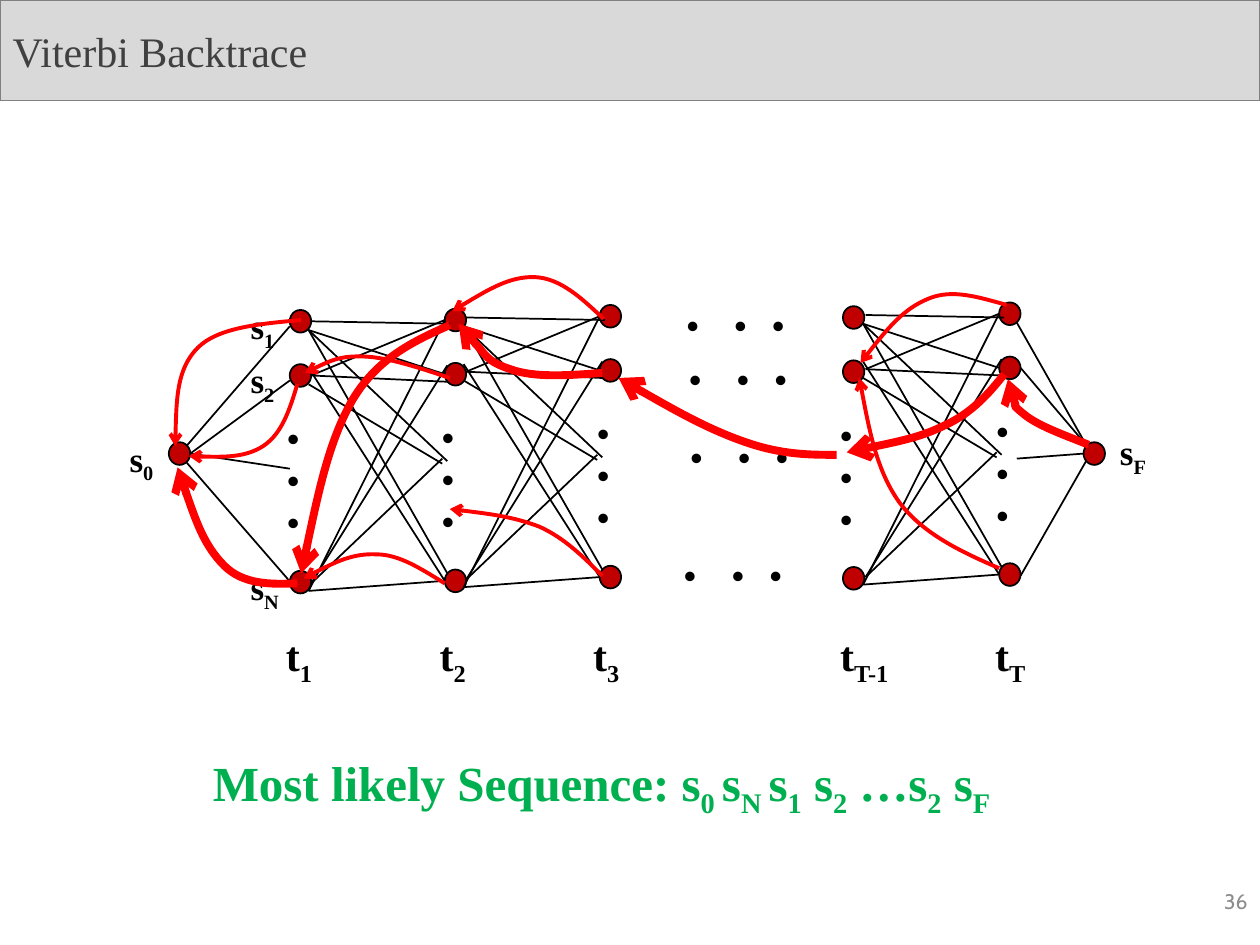
from dataclasses import dataclass

from lxml import etree
from pptx import Presentation
from pptx.dml.color import RGBColor
from pptx.enum.shapes import MSO_CONNECTOR, MSO_SHAPE
from pptx.enum.text import MSO_ANCHOR, MSO_AUTO_SIZE, PP_ALIGN
from pptx.oxml.ns import qn
from pptx.util import Inches, Pt

STRAIGHT = MSO_CONNECTOR.STRAIGHT
OVAL = MSO_SHAPE.OVAL
MIDDLE = MSO_ANCHOR.MIDDLE
LEFT, RIGHT = PP_ALIGN.LEFT, PP_ALIGN.RIGHT
FIT_SHAPE = MSO_AUTO_SIZE.SHAPE_TO_FIT_TEXT


@dataclass(frozen=True)
class Theme:
    font: str = "Times New Roman"
    number_font: str = "Cabin"
    black: RGBColor = RGBColor(0, 0, 0)
    node: RGBColor = RGBColor(0xC0, 0, 0)
    trace: RGBColor = RGBColor(0xFF, 0, 0)
    answer: RGBColor = RGBColor(0, 0xB0, 0x50)
    bar: RGBColor = RGBColor(0xD9, 0xD9, 0xD9)
    bar_line: RGBColor = RGBColor(0x80, 0x80, 0x80)
    title: RGBColor = RGBColor(0x40, 0x40, 0x40)
    number: RGBColor = RGBColor(0x8C, 0x8C, 0x8C)
    title_size: int = 24
    state_size: int = 20
    time_size: int = 24
    answer_size: int = 28
    number_size: int = 12
    thin: float = 1
    pointer: float = 2.25
    best: float = 4.5


theme = Theme()


def add_label(left, top, width, height, parts, size=theme.state_size, color=theme.black, lines=1):
    shape = slide.shapes.add_textbox(Inches(left), Inches(top), Inches(width), Inches(height))
    frame = shape.text_frame
    frame.word_wrap = False
    frame.auto_size = FIT_SHAPE
    for line in range(lines):
        paragraph = frame.add_paragraph() if line else frame.paragraphs[0]
        for index, part in enumerate(parts):
            run = paragraph.add_run()
            run.text = part
            run.font.name = theme.font
            run.font.size = Pt(size)
            run.font.bold = True
            run.font.color.rgb = color
            if index % 2:
                run.font._element.set("baseline", "-25000")
    return paragraph


def add_back_pointer(points, width):
    corners = [(Inches(x), Inches(y)) for x, y in points]
    builder = slide.shapes.build_freeform(*corners[0])
    builder.add_line_segments(corners[1:], close=False)
    shape = builder.convert_to_shape()
    shape.shadow.inherit = False
    shape.fill.background()
    shape.line.color.rgb = theme.trace
    shape.line.width = Pt(width)
    segments = list(shape._element.iter(qn("a:lnTo")))
    for first in range(0, len(segments), 3):
        curve = etree.Element(qn("a:cubicBezTo"))
        segments[first].addprevious(curve)
        for segment in segments[first:first + 3]:
            curve.append(segment[0])
            segment.getparent().remove(segment)
    etree.SubElement(shape.line._get_or_add_ln(), qn("a:tailEnd"), type="arrow")


presentation = Presentation()
presentation.slide_width = Inches(10)
presentation.slide_height = Inches(7.5)
slide = presentation.slides.add_slide(presentation.slide_layouts[5])

title = slide.shapes.title
title.left, title.top, title.width, title.height = Inches(0), Inches(0), Inches(10), Inches(0.8)
title.fill.solid()
title.fill.fore_color.rgb = theme.bar
title.line.color.rgb = theme.bar_line
title.line.width = Pt(0.75)
title.text_frame.text = "Viterbi Backtrace"
title.text_frame.vertical_anchor = MIDDLE
paragraph = title.text_frame.paragraphs[0]
paragraph.alignment = LEFT
paragraph.font.name = theme.font
paragraph.font.size = Pt(theme.title_size)
paragraph.font.color.rgb = theme.title

number = slide.shapes.add_textbox(Inches(7.67), Inches(6.95), Inches(2.33), Inches(0.4))
number.text_frame.word_wrap = True
number.text_frame.vertical_anchor = MIDDLE
number.text_frame.text = "36"
paragraph = number.text_frame.paragraphs[0]
paragraph.alignment = RIGHT
paragraph.font.name = theme.number_font
paragraph.font.size = Pt(theme.number_size)
paragraph.font.color.rgb = theme.number

columns = [(2.3, 2.46), (3.53, 2.45), (4.76, 2.42), (6.69, 2.43), (7.93, 2.4)]
row_offsets = [0, 0.43, 2.07]
nodes = [(x, y + offset) for x, y in columns for offset in row_offsets]
nodes += [(1.34, 3.51), (8.6, 3.51)]
for x, y in nodes:
    node = slide.shapes.add_shape(OVAL, Inches(x), Inches(y), Inches(0.17), Inches(0.18))
    node.shadow.inherit = False
    node.fill.solid()
    node.fill.fore_color.rgb = theme.node
    node.line.color.rgb = theme.black
    node.line.width = Pt(theme.thin)

for x, y in columns:
    add_label(x - 0.12, y + 0.8, 0.33, 1.11, ["•"], lines=3)

states = [
    ("1", 1.89, 2.37, 0.4), ("2", 1.89, 2.8, 0.4), ("N", 1.89, 4.44, 0.46),
    ("0", 0.93, 3.42, 0.4), ("F", 8.79, 3.37, 0.44),
]
for name, left, top, width in states:
    add_label(left, top, width, 0.44, ["s", name])

stage_edges = [
    ((-1.06, 0.1), (0.04, 0.12)), ((-1.08, 0.17), (0, 0.52)),
    ((-1.08, 0.17), (0.02, 2.1)), ((-1.08, 0.17), (0.02, 1.21)),
    ((-1.06, 0.53), (0, 0.09)), ((-1.06, 0.53), (0.02, 0.58)),
    ((-1.08, 0.47), (0, 2.16)), ((-1.08, 2.24), (0, 0.09)),
    ((-1.06, 2.18), (0.02, 0.45)), ((-1.08, 2.24), (0, 2.16)),
    ((-1.06, 2.18), (-0.02, 1.19)), ((-1.08, 0.6), (-0.02, 1.23)),
]
edges = [
    ((x + start[0], y + start[1]), (x + end[0], y + end[1]))
    for x, y in (columns[1], columns[2], columns[4])
    for start, end in stage_edges
]
edges += [
    ((1.48, 3.54), (2.3, 2.59)), ((1.51, 3.6), (2.3, 3.02)),
    ((1.48, 3.67), (2.34, 4.66)), ((1.51, 3.6), (2.3, 3.72)),
    ((8.07, 2.56), (8.62, 3.53)), ((8.1, 2.92), (8.62, 3.53)),
    ((8.1, 4.57), (8.62, 3.66)), ((8.07, 3.64), (8.6, 3.6)),
]
for start, end in edges:
    edge = slide.shapes.add_connector(STRAIGHT, *(Inches(value) for value in start + end))
    edge.line.color.rgb = theme.black
    edge.line.width = Pt(theme.thin)
    etree.SubElement(edge._element.spPr, qn("a:effectLst"))

for left, top in [(5.35, 2.36), (5.37, 2.79), (5.38, 3.41), (5.33, 4.34)]:
    paragraph = add_label(left, top, 1.08, 0.44, ["•\t•\t•"])
    tabs = etree.SubElement(paragraph._p.get_or_add_pPr(), qn("a:tabLst"))
    for position in (0.38, 0.68):
        etree.SubElement(tabs, qn("a:tab"), pos=str(Inches(position)), algn="l")

times = [("1", 2.17, 0.43), ("2", 3.39, 0.43), ("3", 4.61, 0.43), ("T-1", 6.57, 0.64), ("T", 7.8, 0.47)]
for name, left, width in times:
    add_label(left, 4.95, width, 0.5, ["t", name], theme.time_size)

back_pointers = [
    (theme.best, [(8.64, 3.53), (8.44, 3.45), (8.24, 3.38), (8.13, 3.29), (8.02, 3.2), (8.01, 3.11), (8, 3.01)]),
    (theme.pointer, [(7.99, 2.42), (7.77, 2.36), (7.56, 2.29), (7.37, 2.37), (7.17, 2.45), (7, 2.66), (6.83, 2.88)]),
    (theme.best, [(7.97, 2.97), (7.85, 3.12), (7.72, 3.27), (7.51, 3.37), (7.31, 3.47), (7.01, 3.53), (6.72, 3.59)]),
    (theme.pointer, [(7.93, 4.51), (7.63, 4.38), (7.33, 4.24), (7.14, 3.99), (6.96, 3.74), (6.89, 3.37), (6.82, 3)]),
    (theme.pointer, [(4.79, 2.53), (4.62, 2.37), (4.45, 2.21), (4.25, 2.2), (4.05, 2.19), (3.82, 2.33), (3.59, 2.47)]),
    (theme.best, [(4.78, 2.96), (4.51, 2.98), (4.24, 3), (4.05, 2.93), (3.86, 2.87), (3.64, 2.57), (3.64, 2.57)]),
    (theme.pointer, [(4.78, 4.57), (4.63, 4.42), (4.48, 4.27), (4.28, 4.18), (4.07, 4.1), (3.82, 4.07), (3.57, 4.04)]),
    (theme.pointer, [(3.57, 3), (3.33, 2.92), (3.09, 2.84), (2.9, 2.83), (2.7, 2.82), (2.56, 2.89), (2.42, 2.96)]),
    (theme.pointer, [(3.53, 4.63), (3.35, 4.52), (3.17, 4.4), (2.99, 4.4), (2.8, 4.39), (2.6, 4.49), (2.41, 4.59)]),
    (theme.pointer, [(2.39, 2.54), (2.06, 2.57), (1.73, 2.6), (1.57, 2.76), (1.4, 2.93), (1.4, 3.24), (1.39, 3.54)]),
    (theme.pointer, [(2.36, 3.05), (2.3, 3.25), (2.24, 3.44), (2.09, 3.54), (1.95, 3.63), (1.72, 3.63), (1.5, 3.62)]),
    (theme.best, [(2.36, 4.63), (2.15, 4.64), (1.93, 4.64), (1.78, 4.49), (1.62, 4.33), (1.51, 4.02), (1.41, 3.71)]),
    (theme.best, [(3.57, 2.58), (3.28, 2.71), (3, 2.84), (2.8, 3.17), (2.61, 3.5), (2.5, 4.03), (2.39, 4.55)]),
    (theme.best, [(6.64, 3.61), (6.43, 3.61), (6.21, 3.61), (5.92, 3.51), (5.63, 3.41), (5.27, 3.21), (4.91, 3)]),
]
for width, points in back_pointers:
    add_back_pointer(points, width)

sequence = ["Most likely Sequence: s", "0 ", "s", "N ", "s", "1", " s", "2", " …s", "2", " s", "F"]
add_label(1.59, 5.92, 7.05, 0.57, sequence, theme.answer_size, theme.answer)

presentation.save("out.pptx")
